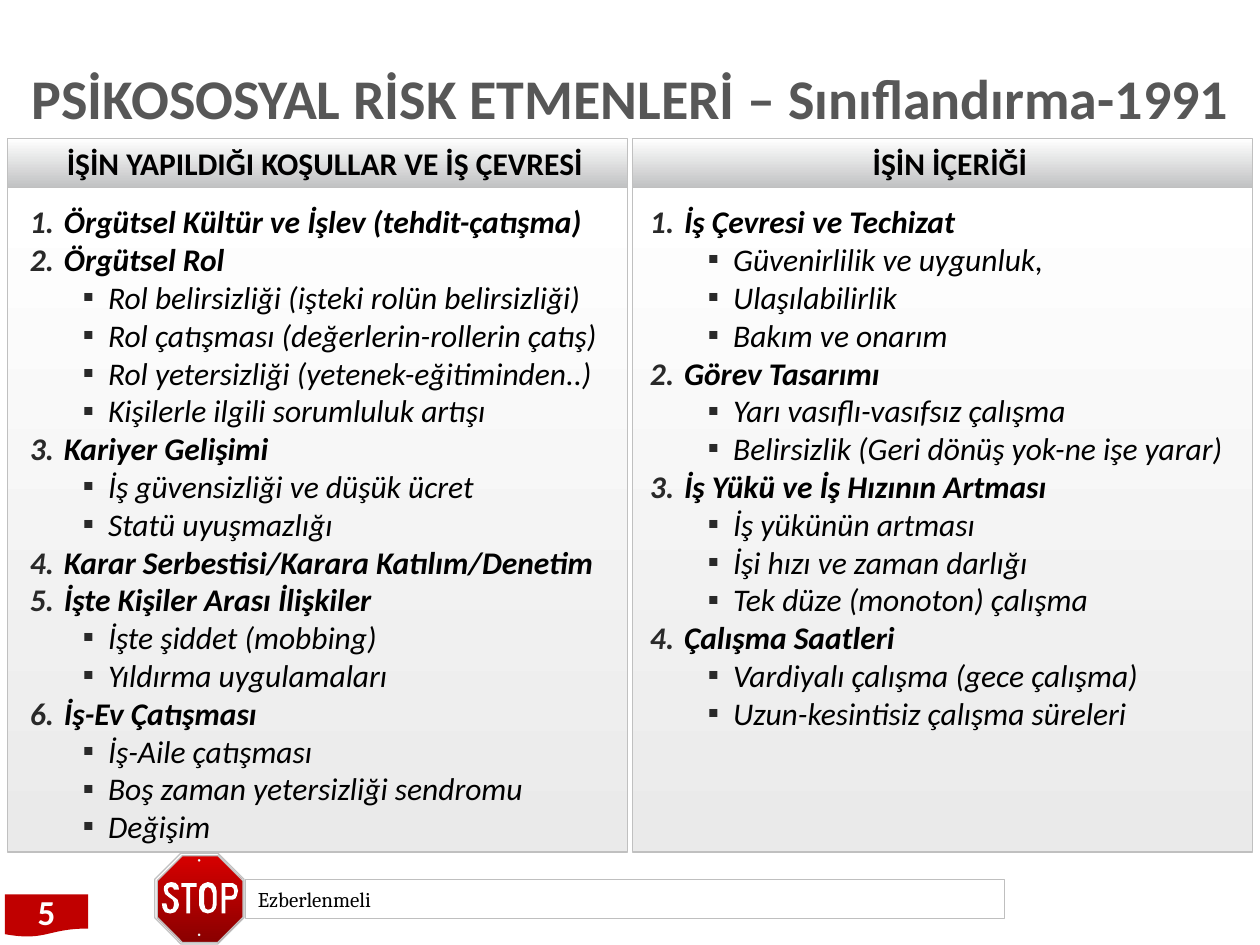
from lxml.etree import SubElement
from pptx import Presentation
from pptx.dml.color import RGBColor
from pptx.enum.shapes import MSO_SHAPE
from pptx.enum.text import MSO_ANCHOR, MSO_AUTO_SIZE, PP_ALIGN
from pptx.oxml.ns import qn
from pptx.util import Cm, Pt

BLACK = RGBColor(0x00, 0x00, 0x00)
WHITE = RGBColor(0xFF, 0xFF, 0xFF)
GRAY = RGBColor(0x57, 0x57, 0x57)
BULLET_GRAY = RGBColor(0x29, 0x29, 0x29)
BORDER = RGBColor(0xC0, 0xC0, 0xC0)
NOTE_BORDER = RGBColor(0xBF, 0xBF, 0xBF)
HEADING_END = RGBColor(0xC1, 0xC2, 0xC3)
PANEL_END = RGBColor(0xEA, 0xEA, 0xEA)
DOT_GRAY = RGBColor(0xD2, 0xD2, 0xD2)
SIGN_START = RGBColor(0xD6, 0x00, 0x00)
SIGN_END = RGBColor(0x8A, 0x00, 0x00)
RED = RGBColor(0xC0, 0x00, 0x00)

COLUMNS = [
    (0.15, 0.84, "İŞİN YAPILDIĞI KOŞULLAR VE İŞ ÇEVRESİ", [
        ("Örgütsel Kültür ve İşlev (tehdit-çatışma)", []),
        ("Örgütsel Rol", [
            "Rol belirsizliği (işteki rolün belirsizliği)",
            "Rol çatışması (değerlerin-rollerin çatış)",
            "Rol yetersizliği (yetenek-eğitiminden..)",
            "Kişilerle ilgili sorumluluk artışı"]),
        ("Kariyer Gelişimi", ["İş güvensizliği ve düşük ücret", "Statü uyuşmazlığı"]),
        ("Karar Serbestisi/Karara Katılım/Denetim", []),
        ("İşte Kişiler Arası İlişkiler", ["İşte şiddet (mobbing)", "Yıldırma uygulamaları"]),
        ("İş-Ev Çatışması", [
            "İş-Aile çatışması", "Boş zaman yetersizliği sendromu", "Değişim"]),
    ]),
    (12.75, 0.74, "İŞİN İÇERİĞİ", [
        ("İş Çevresi ve Techizat", [
            "Güvenirlilik ve uygunluk,", "Ulaşılabilirlik", "Bakım ve onarım"]),
        ("Görev Tasarımı", [
            "Yarı vasıflı-vasıfsız çalışma", "Belirsizlik (Geri dönüş yok-ne işe yarar)"]),
        ("İş Yükü ve İş Hızının Artması", [
            "İş yükünün artması", "İşi hızı ve zaman darlığı", "Tek düze (monoton) çalışma"]),
        ("Çalışma Saatleri", [
            "Vardiyalı çalışma (gece çalışma)", "Uzun-kesintisiz çalışma süreleri"]),
    ]),
]

LETTERS = {
    "S": [[(1420, 7060), (1415, 7030), (1395, 7008), (1360, 7000), (1325, 7010),
           (1303, 7035), (1300, 7060), (1310, 7095), (1340, 7120), (1370, 7140),
           (1380, 7160), (1380, 7185), (1373, 7210), (1350, 7220), (1330, 7210),
           (1320, 7170), (1285, 7170), (1290, 7205), (1310, 7240), (1350, 7250),
           (1390, 7240), (1415, 7205), (1420, 7180), (1410, 7140), (1370, 7110),
           (1340, 7085), (1330, 7060), (1340, 7043), (1360, 7040), (1375, 7046),
           (1380, 7060)]],
    "T": [[(1480, 7250), (1480, 7040), (1440, 7040), (1440, 7010),
           (1560, 7010), (1560, 7040), (1510, 7040), (1510, 7250)]],
    "O": [[(1650, 7000), (1610, 7015), (1588, 7040), (1580, 7070), (1580, 7180),
           (1588, 7210), (1610, 7238), (1650, 7250), (1690, 7238), (1712, 7210),
           (1720, 7180), (1720, 7075), (1712, 7040), (1690, 7012)],
          [(1690, 7170), (1685, 7200), (1675, 7215), (1650, 7220), (1630, 7210),
           (1620, 7170), (1620, 7080), (1630, 7050), (1650, 7040), (1675, 7052),
           (1690, 7090)]],
    "P": [[(1880, 7030), (1850, 7010), (1760, 7010), (1760, 7250), (1790, 7250),
           (1790, 7140), (1850, 7140), (1870, 7130), (1880, 7110), (1890, 7070)],
          [(1840, 7110), (1790, 7110), (1790, 7040), (1840, 7040), (1855, 7055),
           (1860, 7080), (1855, 7100)]],
}


def add_text(paragraph, text, font="Calibri", size=18, color=BLACK, bold=False, italic=False):
    """Append a formatted run to a paragraph."""
    run = paragraph.add_run()
    run.text = text
    run.font.name = font
    run.font.size = Pt(size)
    run.font.color.rgb = color
    run.font.bold = bold
    run.font.italic = italic


class SlideBuilder:
    """Hold the slide and the shared style of its elements."""

    def __init__(self, slide):
        self.slide = slide
        self.shapes = slide.shapes

    def place(self, shape, left, top, width, height):
        """Move and size a shape in centimetres."""
        shape.left, shape.top = Cm(left), Cm(top)
        shape.width, shape.height = Cm(width), Cm(height)

    def paint(self, shape, fill=None, border=None, border_width=1):
        """Fill a shape with a colour or a downward gradient and outline it."""
        if fill is None:
            shape.fill.background()
        elif isinstance(fill, RGBColor):
            shape.fill.solid()
            shape.fill.fore_color.rgb = fill
        else:
            shape.fill.gradient()
            shape.fill.gradient_angle = 270
            for stop, color in zip(shape.fill.gradient_stops, fill):
                stop.color.rgb = color
        if border is None:
            shape.line.fill.background()
        else:
            shape.line.color.rgb = border
            shape.line.width = Pt(border_width)

    def frame(self, shape, insets, anchor=MSO_ANCHOR.MIDDLE, align=PP_ALIGN.LEFT):
        """Set up a text frame and return its first paragraph."""
        frame = shape.text_frame
        frame.word_wrap = True
        frame.auto_size = MSO_AUTO_SIZE.NONE
        frame.vertical_anchor = anchor
        (frame.margin_left, frame.margin_top,
         frame.margin_right, frame.margin_bottom) = map(Cm, insets)
        paragraph = frame.paragraphs[0]
        paragraph.alignment = align
        paragraph.space_before = Pt(0)
        return paragraph

    def indent(self, paragraph, margin, hanging=0):
        """Indent a paragraph and return its properties element."""
        properties = paragraph._p.get_or_add_pPr()
        properties.set("marL", str(Cm(margin)))
        properties.set("indent", str(-Cm(hanging)))
        return properties

    def title(self, text):
        shape = self.shapes.title
        self.place(shape, 0.64, 1.14, 24.49, 1.8)
        paragraph = self.frame(shape, (0, 0.13, 0, 0.13))
        paragraph.line_spacing = 0.9
        add_text(paragraph, text, size=32, color=GRAY, bold=True)

    def heading(self, index, left, text):
        shape = self.slide.placeholders[index]
        self.place(shape, left, 2.79, 12.5, 0.99)
        self.paint(shape, (WHITE, HEADING_END), BORDER)
        paragraph = self.frame(shape, (0, 0, 0, 0), align=PP_ALIGN.CENTER)
        self.indent(paragraph, 0.3)
        add_text(paragraph, text, bold=True)

    def outline(self, index, left, margin, topics):
        """Fill a body placeholder with numbered topics and bulleted details."""
        shape = self.slide.placeholders[index]
        self.place(shape, left, 3.78, 12.5, 13.39)
        self.paint(shape, (WHITE, PANEL_END), BORDER)
        paragraph = self.frame(shape, (0.3, 0.3, 0.41, 0.2), MSO_ANCHOR.TOP)
        items = [(level, text) for topic, details in topics
                 for level, text in [(0, topic)] + [(1, detail) for detail in details]]
        for number, (level, text) in enumerate(items):
            if number:
                paragraph = shape.text_frame.add_paragraph()
            paragraph.level = level
            paragraph.space_before = Pt(0)
            properties = self.indent(paragraph, *((1.73, 0.51) if level else (margin, 0.69)))
            color = SubElement(properties, qn("a:buClr"))
            SubElement(color, qn("a:srgbClr"), val=str(BULLET_GRAY))
            SubElement(properties, qn("a:buFont"), typeface="Calibri")
            if level:
                SubElement(properties, qn("a:buChar"), char="▪")
            else:
                SubElement(properties, qn("a:buAutoNum"), type="arabicPeriod")
            add_text(paragraph, text, bold=level == 0, italic=True)

    def shape(self, kind, left, top, width, height, **style):
        shape = self.shapes.add_shape(kind, Cm(left), Cm(top), Cm(width), Cm(height))
        shape.shadow.inherit = False
        self.paint(shape, **style)
        return shape

    def letter(self, contours):
        """Draw a letter from contours given in thousandths of an inch."""
        first, *others = contours
        builder = self.shapes.build_freeform(*first[0], scale=Cm(2.54) / 1000)
        builder.add_line_segments(first[1:], close=True)
        for contour in others:
            builder.move_to(*contour[0])
            builder.add_line_segments(contour[1:], close=True)
        shape = builder.convert_to_shape()
        shape.shadow.inherit = False
        self.paint(shape, WHITE)

    def stop_sign(self):
        self.shape(MSO_SHAPE.OCTAGON, 3.12, 17.2, 1.8, 1.83,
                   fill=WHITE, border=BORDER, border_width=0.75)
        self.shape(MSO_SHAPE.OCTAGON, 3.17, 17.25, 1.73, 1.75,
                   fill=(SIGN_START, SIGN_END), border=BORDER, border_width=0.75)
        for contours in LETTERS.values():
            self.letter(contours)
        for top in (17.32, 18.82):
            self.shape(MSO_SHAPE.OVAL, 3.99, top, 0.05, 0.05, fill=DOT_GRAY)
            self.shape(MSO_SHAPE.OVAL, 4, top + 0.01, 0.03, 0.03, fill=WHITE)

    def note(self, text):
        shape = self.shape(MSO_SHAPE.RECTANGLE, 4.95, 17.73, 15.29, 0.79,
                           border=NOTE_BORDER, border_width=0.25)
        add_text(self.frame(shape, (0.25, 0.13, 0.25, 0.13)), text, font="Cambria", size=12)

    def page_number(self, text):
        shape = self.shape(MSO_SHAPE.FLOWCHART_DOCUMENT, 0.1, 18.03, 1.68, 0.86, fill=RED)
        paragraph = self.frame(shape, (0.25, 0.13, 0.25, 0.13), align=PP_ALIGN.CENTER)
        add_text(paragraph, text, size=20, color=WHITE, bold=True)


def main():
    presentation = Presentation()
    presentation.slide_width, presentation.slide_height = Cm(25.4), Cm(19.05)
    builder = SlideBuilder(presentation.slides.add_slide(presentation.slide_layouts[4]))
    builder.title("PSİKOSOSYAL RİSK ETMENLERİ – Sınıflandırma-1991")
    for index, (left, margin, heading, topics) in zip((1, 3), COLUMNS):
        builder.heading(index, left, heading)
        builder.outline(index + 1, left, margin, topics)
    builder.stop_sign()
    builder.note("Ezberlenmeli")
    builder.page_number("5")
    presentation.save("out.pptx")


if __name__ == "__main__":
    main()
